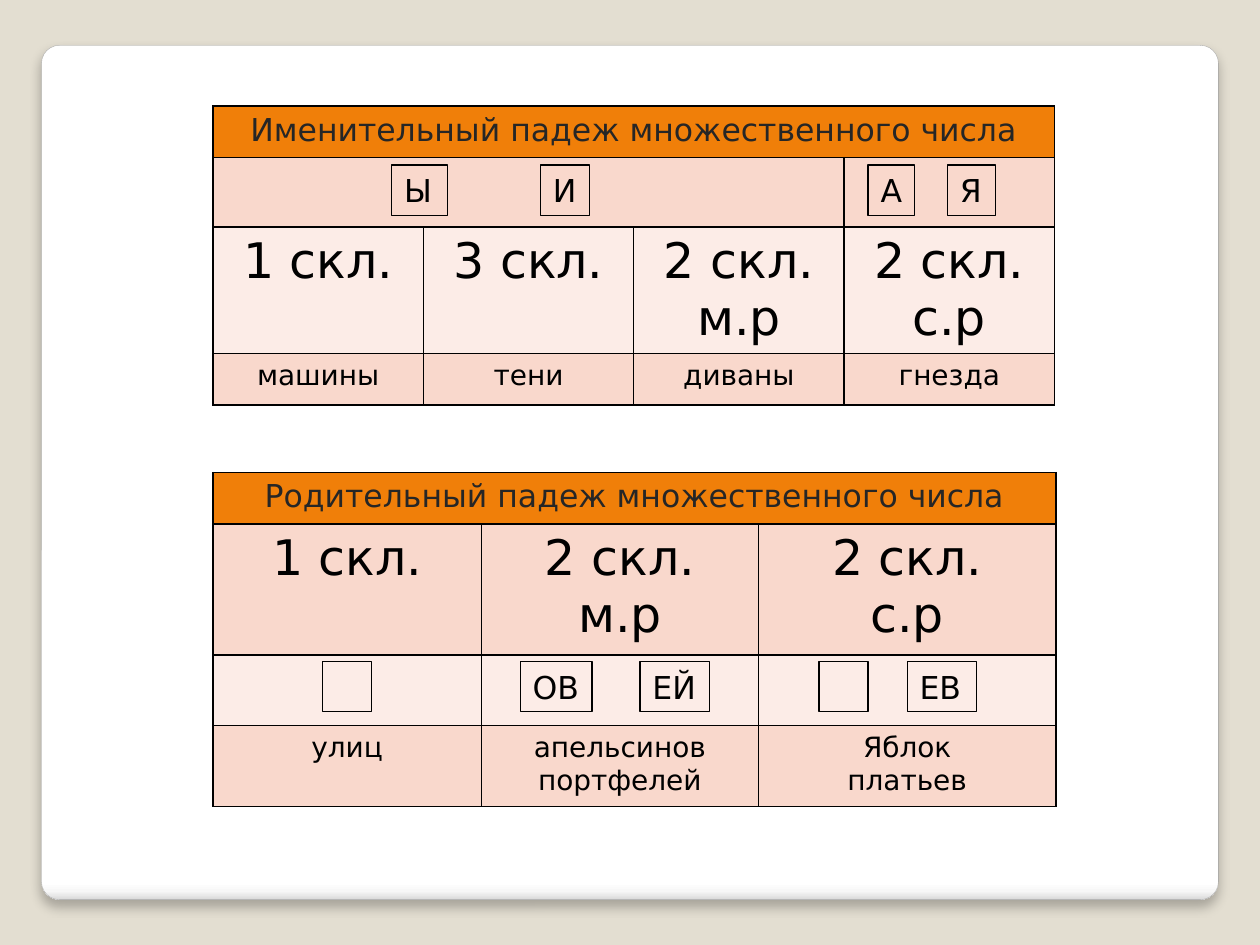
from lxml import etree
from pptx import Presentation
from pptx import util as u
from pptx.dml.color import RGBColor
from pptx.enum import shapes, text
from pptx.oxml.ns import qn

COLORS = {"page": "E3DED1", "panel_line": "A4A4A4", "black": "000000", "title": "262626",
          "head": "F07F09", "dark": "F9D8CC", "light": "FCECE7"}
FONT = "DejaVu Sans"
WIDTH, HEIGHT = 10, 7.5
PANEL_STOPS = [(0, "FFFFFF"), (98, "FFFFFF"), (99, "F7F7F7"), (100, "DADADA")]

# Row: (height, fill, text size, text colour, cells); None continues the cell to its left.
TABLES = [
    {"left": 1.69, "top": 0.84, "cols": [1.67] * 4, "rows": [
        (0.41, "head", 18, "title", ["Именительный падеж множественного числа", None, None, None]),
        (0.55, "dark", 18, "black", ["", None, None, ""]),
        (1.0, "light", 28, "black", ["1 скл.", "3 скл.", "2 скл.\nм.р", "2 скл.\nс.р"]),
        (0.41, "dark", 16, "black", ["машины", "тени", "диваны", "гнезда"])]},
    {"left": 1.69, "top": 3.75, "cols": [2.13, 2.2, 2.36], "rows": [
        (0.41, "head", 18, "title", ["Родительный падеж множественного числа", None, None]),
        (1.04, "dark", 28, "black", ["1 скл.", "2 скл.\nм.р", "2 скл.\nс.р"]),
        (0.56, "light", 18, "black", ["", "", ""]),
        (0.64, "dark", 16, "black", ["улиц", "апельсинов\nпортфелей", "Яблок\nплатьев"])]},
]
# Row of endings: top, then (text, left, width).
ENDING_HEIGHT = 0.4
ENDINGS = [
    (1.31, [("Ы", 3.11, 0.44), ("И", 4.29, 0.39), ("А", 6.89, 0.37), ("Я", 7.52, 0.38)]),
    (5.25, [("", 2.56, 0.39), ("ОВ", 4.13, 0.57), ("ЕЙ", 5.08, 0.55), ("", 6.5, 0.39),
            ("ЕВ", 7.2, 0.55)]),
]


def rgb(name):
    return RGBColor.from_string(COLORS[name])


def add_xml(parent, tag, **attrs):
    return etree.SubElement(parent, qn(tag), {k: str(v) for k, v in attrs.items()})


def write(tf, content, size, color, align):
    for i, line in enumerate(content.split("\n")):
        p = tf.paragraphs[0] if i == 0 else tf.add_paragraph()
        p.alignment = align
        if line:
            r = p.add_run()
            r.text = line
            r.font.size, r.font.name = u.Pt(size), FONT
            r.font.color.rgb = rgb(color)


def add_panel(s):
    x, y = 0.33, 0.36
    sp = s.shapes.add_shape(shapes.MSO_SHAPE.ROUNDED_RECTANGLE, u.Inches(x), u.Inches(y),
                            u.Inches(WIDTH - 2 * x), u.Inches(HEIGHT - 2 * y))
    sp.adjustments[0] = 0.021
    sp.fill.gradient()
    sp.fill.gradient_angle = 270
    stops = sp._element.spPr.find(".//" + qn("a:gsLst"))
    for old in list(stops):
        stops.remove(old)
    for pos, color in PANEL_STOPS:
        add_xml(add_xml(stops, "a:gs", pos=pos * 1000), "a:srgbClr", val=color)
    sp.line.color.rgb = rgb("panel_line")
    sp.line.width = u.Pt(0.16)
    sp.shadow.inherit = False
    shadow = add_xml(sp._element.spPr.find(qn("a:effectLst")), "a:outerShdw", blurRad=u.Pt(6),
                     dist=u.Pt(4), dir=90 * 60000, algn="t", rotWithShape=0)
    add_xml(add_xml(shadow, "a:srgbClr", val=COLORS["black"]), "a:alpha", val=25000)


def add_borders(cell):
    tc_pr = cell._tc.get_or_add_tcPr()
    for side in "LRTB":
        ln = add_xml(tc_pr, "a:ln" + side, w=u.Pt(1))
        add_xml(add_xml(ln, "a:solidFill"), "a:srgbClr", val=COLORS["black"])


def add_case_table(s, left, top, cols, rows):
    heights = [row[0] for row in rows]
    table = s.shapes.add_table(len(rows), len(cols), u.Inches(left), u.Inches(top),
                               u.Inches(sum(cols)), u.Inches(sum(heights))).table
    for column, width in zip(table.columns, cols):
        column.width = u.Inches(width)
    for r, (height, fill, size, color, cells) in enumerate(rows):
        table.rows[r].height = u.Inches(height)
        start = 0
        for c, content in enumerate(cells):
            cell = table.cell(r, c)
            add_borders(cell)
            cell.fill.solid()
            cell.fill.fore_color.rgb = rgb(fill)
            if content is not None:
                start = c
                write(cell.text_frame, content, size, color, text.PP_ALIGN.CENTER)
            elif c + 1 == len(cells) or cells[c + 1] is not None:
                table.cell(r, start).merge(cell)


def add_ending(s, content, left, top, width):
    sp = s.shapes.add_shape(shapes.MSO_SHAPE.RECTANGLE, u.Inches(left), u.Inches(top),
                            u.Inches(width), u.Inches(ENDING_HEIGHT))
    sp.shadow.inherit = False
    sp.fill.background()
    sp.line.color.rgb = rgb("black")
    sp.line.width = u.Pt(0.75)
    if content:
        tf = sp.text_frame
        tf.word_wrap = False
        tf.auto_size = text.MSO_AUTO_SIZE.SHAPE_TO_FIT_TEXT
        tf.vertical_anchor = text.MSO_ANCHOR.TOP
        write(tf, content, 18, "black", text.PP_ALIGN.LEFT)


def main():
    prs = Presentation()
    prs.slide_width, prs.slide_height = u.Inches(WIDTH), u.Inches(HEIGHT)
    s = prs.slides.add_slide(prs.slide_layouts[6])
    s.background.fill.solid()
    s.background.fill.fore_color.rgb = rgb("page")
    add_panel(s)
    for table, (top, boxes) in zip(TABLES, ENDINGS):
        add_case_table(s, **table)
        for content, left, width in boxes:
            add_ending(s, content, left, top, width)
    prs.save("out.pptx")


if __name__ == "__main__":
    main()
